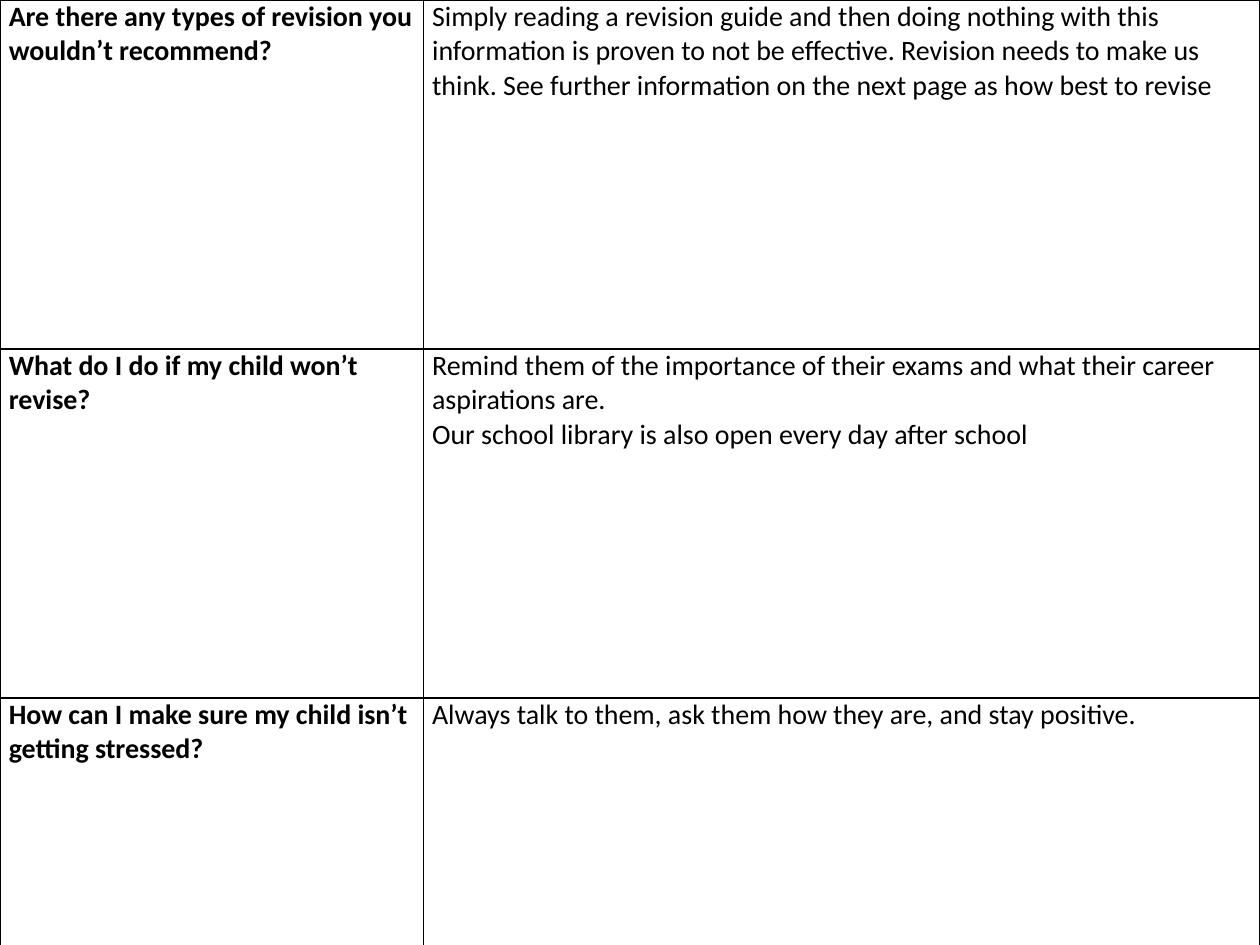
from lxml.etree import SubElement
from pptx import Presentation
from pptx.dml.color import RGBColor
from pptx.oxml.ns import qn
from pptx.util import Pt

BLACK = RGBColor(0, 0, 0)
WHITE = RGBColor(255, 255, 255)
SLIDE_WIDTH, SLIDE_HEIGHT = Pt(720), Pt(540)
QUESTION_SHARE = 0.336
ROW_SHARES = (0.366, 0.366, 0.268)
CELL_FORMAT = {
    "margin_left": Pt(5.04),
    "margin_right": Pt(5.04),
    "margin_top": Pt(0),
    "margin_bottom": Pt(0),
}
FONT_FORMAT = {"name": "Calibri", "size": Pt(16)}
ADVICE = (
    (
        "Are there any types of revision you wouldn’t recommend?",
        "Simply reading a revision guide and then doing nothing with this "
        "information is proven to not be effective. Revision needs to make us "
        "think. See further information on the next page as how best to revise",
    ),
    (
        "What do I do if my child won’t revise?",
        "Remind them of the importance of their exams and what their career "
        "aspirations are.\n"
        "Our school library is also open every day after school",
    ),
    (
        "How can I make sure my child isn’t getting stressed?",
        "Always talk to them, ask them how they are, and stay positive.",
    ),
)


def apply_format(target, values):
    """Set each named attribute of the target."""
    for attribute, value in values.items():
        setattr(target, attribute, value)


def add_borders(cell, color, width):
    """Draw a solid line on all four sides of a cell."""
    properties = cell._tc.get_or_add_tcPr()
    for side in ("a:lnL", "a:lnR", "a:lnT", "a:lnB"):
        border = SubElement(properties, qn(side), w=str(width))
        solid = SubElement(border, qn("a:solidFill"))
        SubElement(solid, qn("a:srgbClr"), val=str(color))


def fill_cell(cell, wording, bold):
    """Write and style one question or answer."""
    cell.text = wording
    apply_format(cell, CELL_FORMAT)
    add_borders(cell, BLACK, Pt(1))
    cell.fill.solid()
    cell.fill.fore_color.rgb = WHITE
    for paragraph in cell.text_frame.paragraphs:
        for run in paragraph.runs:
            apply_format(run.font, {**FONT_FORMAT, "bold": bold})
            run.font.color.rgb = BLACK


def add_advice_table(slide, left, top, width, height):
    """Place the questions and answers in the given box."""
    advice = slide.shapes.add_table(len(ADVICE), 2, left, top, width, height).table
    apply_format(advice, {"first_row": False, "horz_banding": False})
    question_width = int(width * QUESTION_SHARE)
    advice.columns[0].width = question_width
    advice.columns[1].width = width - question_width
    for index, (share, wordings) in enumerate(zip(ROW_SHARES, ADVICE)):
        advice.rows[index].height = int(height * share)
        for column, wording in enumerate(wordings):
            fill_cell(advice.cell(index, column), wording, bold=column == 0)


def main():
    """Build and save the revision advice slide."""
    presentation = Presentation()
    apply_format(
        presentation, {"slide_width": SLIDE_WIDTH, "slide_height": SLIDE_HEIGHT}
    )
    slide = presentation.slides.add_slide(presentation.slide_layouts[6])
    add_advice_table(slide, Pt(0), Pt(0), SLIDE_WIDTH, Pt(545))
    presentation.save("out.pptx")


if __name__ == "__main__":
    main()
